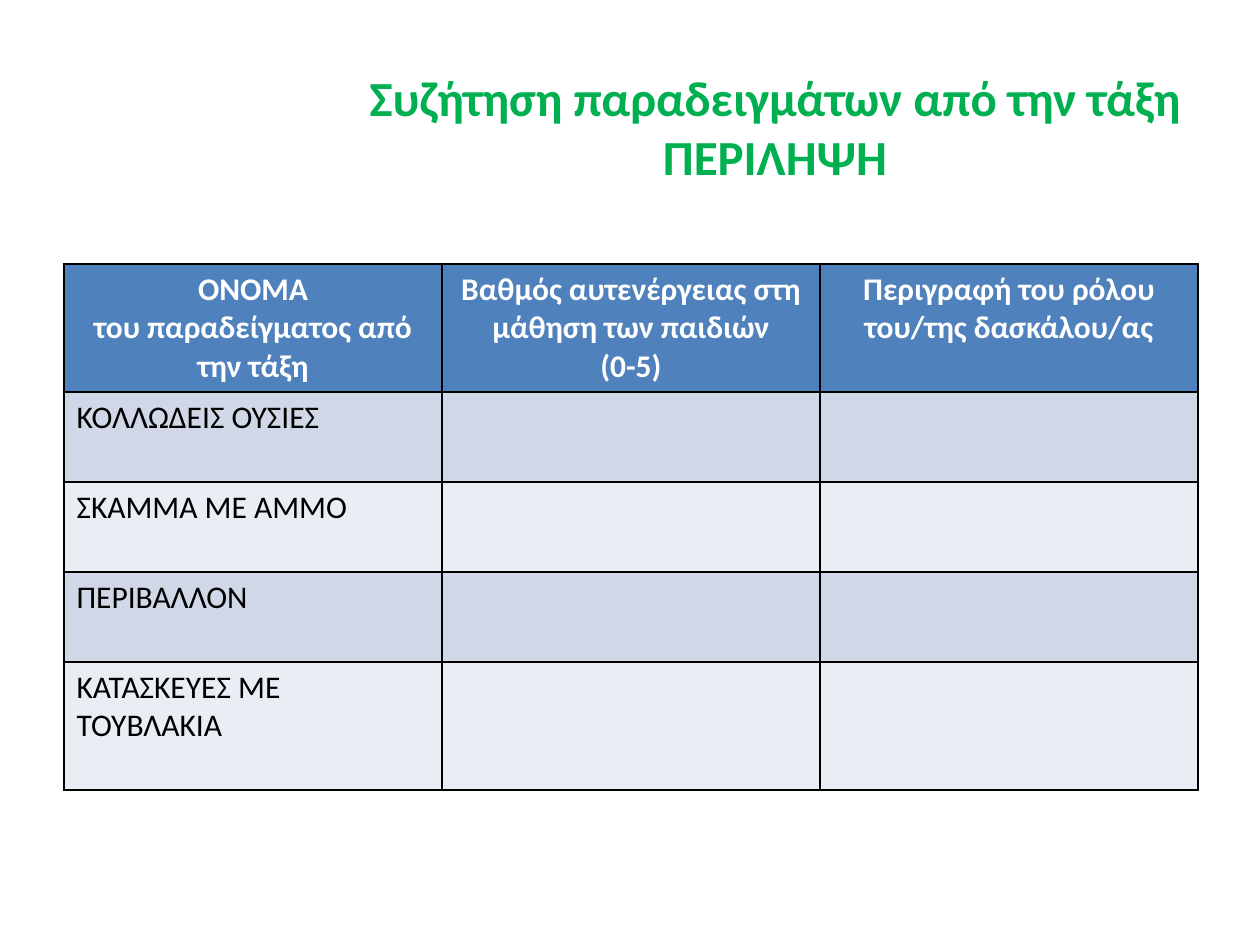
from lxml.etree import SubElement
from pptx import Presentation
from pptx.dml.color import RGBColor
from pptx.enum.text import MSO_ANCHOR, PP_ALIGN
from pptx.oxml import parse_xml
from pptx.oxml.ns import nsdecls, qn
from pptx.util import Pt

PX = 914400 / 126
GREEN = RGBColor(0x00, 0xB0, 0x50)
BLUE = RGBColor(0x4F, 0x81, 0xBD)
BANDS = [RGBColor(0xD0, 0xD8, 0xE8), RGBColor(0xE9, 0xED, 0xF4)]
WHITE = RGBColor(0xFF, 0xFF, 0xFF)
BLACK = RGBColor(0x00, 0x00, 0x00)

COL_WIDTH = 378
ROW_HEIGHTS = [128, 90, 90, 90, 128]
ROWS = [
    ["ΟΝΟΜΑ\nτου παραδείγματος από την τάξη",
     "Βαθμός αυτενέργειας στη μάθηση των παιδιών\n(0-5)",
     "Περιγραφή του ρόλου του/της δασκάλου/ας"],
    ["ΚΟΛΛΩΔΕΙΣ ΟΥΣΙΕΣ", "", ""],
    ["ΣΚΑΜΜΑ ΜΕ ΑΜΜΟ", "", ""],
    ["ΠΕΡΙΒΑΛΛΟΝ", "", ""],
    ["ΚΑΤΑΣΚΕΥΕΣ ΜΕ ΤΟΥΒΛΑΚΙΑ", "", ""],
]


def px(n):
    return round(n * PX)


def format_text(tf, align, color, fmt):
    for p in tf.paragraphs:
        p.alignment = align
        for r in p.runs:
            r.font.color.rgb = color
            for name, value in fmt.items():
                setattr(r.font, name, value)


prs = Presentation()
prs.slide_width, prs.slide_height = px(1260), px(945)
s = prs.slides.add_slide(prs.slide_layouts[5])

title = s.shapes.title
title.left, title.top, title.width, title.height = px(353), px(38), px(844), px(176)
tf = title.text_frame
tf.text = "Συζήτηση παραδειγμάτων από την τάξη ΠΕΡΙΛΗΨΗ"
tf.vertical_anchor = MSO_ANCHOR.MIDDLE
format_text(tf, PP_ALIGN.CENTER, GREEN, {"name": "Calibri", "size": Pt(28), "bold": True})

table = s.shapes.add_table(len(ROWS), 3, px(64), px(264),
                           px(3 * COL_WIDTH), px(sum(ROW_HEIGHTS))).table
for col in table.columns:
    col.width = px(COL_WIDTH)

for i, (height, texts) in enumerate(zip(ROW_HEIGHTS, ROWS)):
    table.rows[i].height = px(height)
    header = i == 0
    for j, text in enumerate(texts):
        cell = table.cell(i, j)
        cell.text = text
        format_text(cell.text_frame,
                    PP_ALIGN.CENTER if header else PP_ALIGN.LEFT,
                    WHITE if header else BLACK,
                    {"name": "Calibri", "size": Pt(18), "bold": header})
        cell.fill.solid()
        cell.fill.fore_color.rgb = BLUE if header else BANDS[(i - 1) % 2]
        tcPr = cell._tc.get_or_add_tcPr()
        for k, side in enumerate(["lnL", "lnR", "lnT", "lnB"]):
            ln = parse_xml(f'<a:{side} {nsdecls("a")} w="{Pt(1)}"/>')
            fill = SubElement(ln, qn("a:solidFill"))
            SubElement(fill, qn("a:srgbClr"), val=str(BLACK))
            tcPr.insert(k, ln)

prs.save("out.pptx")
